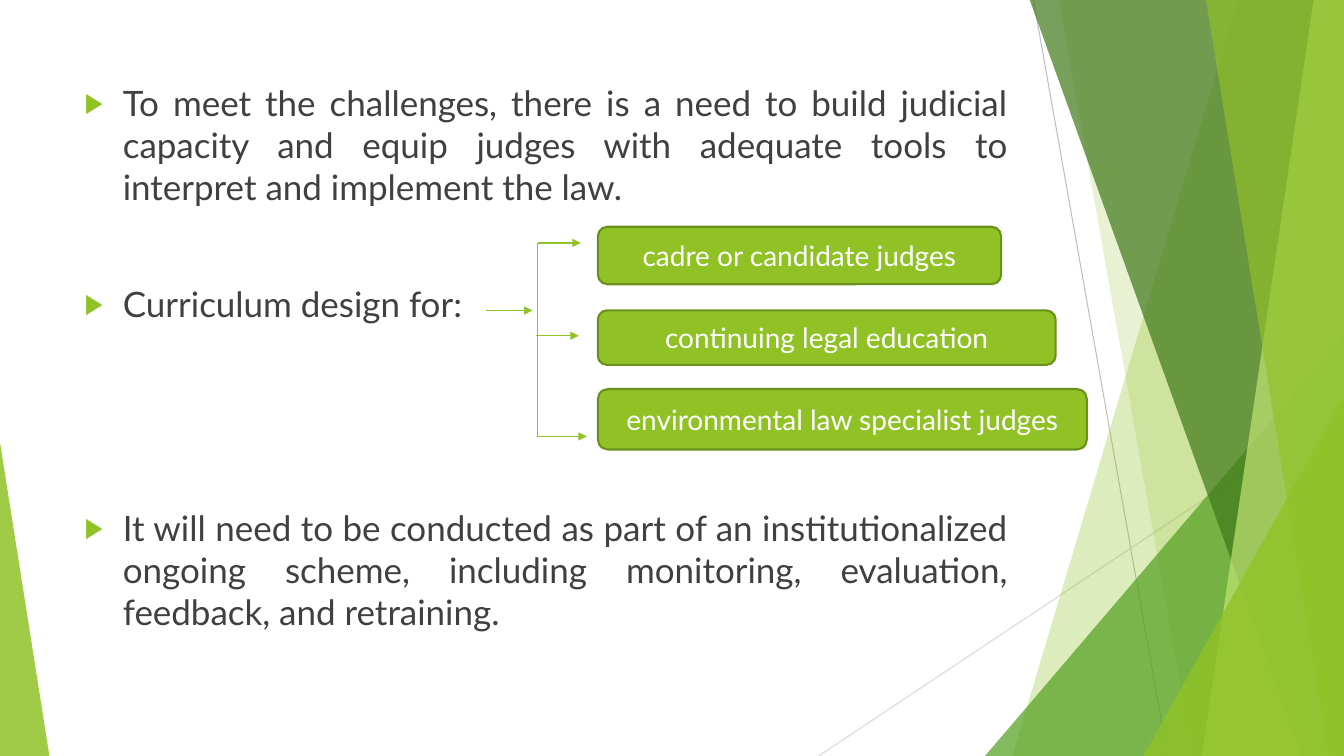
from lxml.etree import SubElement
from pptx import Presentation
from pptx.dml.color import RGBColor
from pptx.enum.shapes import MSO_CONNECTOR as CONN, MSO_SHAPE as SHAPE
from pptx.enum.text import MSO_ANCHOR as ANCHOR, PP_ALIGN as ALIGN
from pptx.oxml.ns import qn
from pptx.util import Inches, Pt

COLORS = {
    "lime": "90C226", "green": "54A021", "forest": "3F7819", "pale": "C0E474",
    "edge": "6B901C", "text": "404040", "white": "FFFFFF",
    "grey": "BFBFBF", "silver": "D9D9D9",
}
FONT = "Lato"


def rgb(name):
    return RGBColor.from_string(COLORS[name])


def paint(sp, color, alpha=100):
    sp.shadow.inherit = False
    sp.fill.solid()
    sp.fill.fore_color.rgb = rgb(color)
    sp.line.fill.background()
    if alpha < 100:
        clr = sp.fill._xPr.find(qn("a:solidFill"))[0]
        SubElement(clr, qn("a:alpha"), val=str(alpha * 1000))


def add_line(s, start, end, color="lime", width=1, arrow=False):
    c = s.shapes.add_connector(CONN.STRAIGHT, *map(Inches, start + end))
    c.line.color.rgb = rgb(color)
    c.line.width = Pt(width)
    if arrow:
        SubElement(c.line._get_or_add_ln(), qn("a:tailEnd"), type="triangle")
    SubElement(c._element.spPr, qn("a:effectLst"))


def add_text(p, text, size=20, color="text", align=ALIGN.CENTER, before=0):
    p.alignment = align
    p.space_before = Pt(before)
    r = p.add_run()
    r.text = text
    r.font.name = FONT
    r.font.size = Pt(size)
    r.font.color.rgb = rgb(color)


def add_bullet(p):
    pPr = p._p.get_or_add_pPr()
    pPr.set("marL", str(Inches(0.38)))
    pPr.set("indent", str(-Inches(0.38)))
    clr = SubElement(pPr, qn("a:buClr"))
    SubElement(clr, qn("a:srgbClr"), val=COLORS["lime"])
    SubElement(pPr, qn("a:buSzPct"), val="80000")
    SubElement(pPr, qn("a:buFont"), typeface="Arial")
    SubElement(pPr, qn("a:buChar"), char="▶")


def add_band(s, right, top, bottom, x_top, x_bottom, color, alpha):
    points = [(x_top, top), (right, top), (right, bottom), (x_bottom, bottom)]
    points = [(Inches(x), Inches(y)) for x, y in points]
    fb = s.shapes.build_freeform(*points[0], scale=1.0)
    fb.add_line_segments(points[1:], close=True)
    paint(fb.convert_to_shape(), color, alpha)


def add_wedge(s, left, top, width, height, peak, color, alpha):
    sp = s.shapes.add_shape(SHAPE.ISOSCELES_TRIANGLE,
                            *map(Inches, (left, top, width, height)))
    sp.adjustments[0] = peak
    paint(sp, color, alpha)


def draw_backdrop(s, width, height):
    add_line(s, (10.25, 0), (11.58, height), "grey", 0.75)
    add_line(s, (width, 4.03), (8.12, height), "silver", 0.75)

    def band(*args):
        add_band(s, width, -0.01, height, *args)

    def right_wedge(w, h, *args):
        add_wedge(s, width - w, height - h, w, h, 1, *args)

    band(12.28, 10.04, "lime", 30)
    band(10.5, 11.83, "lime", 20)
    right_wedge(3.56, 4.17, "green", 72)
    band(10.21, 12.91, "forest", 70)
    band(13.03, 11.92, "pale", 70)
    band(11.96, 13.18, "lime", 65)
    right_wedge(1.99, 3.57, "lime", 80)
    add_wedge(s, 0, height - 3.11, 0.49, 3.11, 0, "lime", 85)


def draw_body(s, left, top, width, height):
    paragraphs = [
        ("To meet the challenges, there is a need to build judicial capacity "
         "and equip judges with adequate tools to interpret and implement "
         "the law.", 0),
        ("Curriculum design for:", 53.5),
        ("It will need to be conducted as part of an institutionalized "
         "ongoing scheme, including monitoring, evaluation, feedback, "
         "and retraining.", 130),
    ]
    tf = s.shapes.add_textbox(*map(Inches, (left, top, width, height))).text_frame
    tf.word_wrap = True
    for i, (text, before) in enumerate(paragraphs):
        p = tf.add_paragraph() if i else tf.paragraphs[0]
        add_text(p, text, size=25, align=ALIGN.JUSTIFY, before=before)
        add_bullet(p)


def draw_audiences(s, left, top):
    audiences = [
        ("cadre or candidate judges", 0, 4, 0.57),
        ("continuing legal education", 0.83, 4.54, 0.54),
        ("environmental law specialist judges", 1.61, 4.85, 0.6),
    ]
    for text, dy, width, height in audiences:
        sp = s.shapes.add_shape(SHAPE.ROUNDED_RECTANGLE,
                                *map(Inches, (left, top + dy, width, height)))
        paint(sp, "lime")
        sp.line.color.rgb = rgb("edge")
        sp.line.width = Pt(1.5)
        tf = sp.text_frame
        tf.word_wrap = True
        tf.vertical_anchor = ANCHOR.MIDDLE
        add_text(tf.paragraphs[0], text, color="white")


def draw_bracket(s, x, top, height):
    add_line(s, (x, top), (x, top + height))
    arrows = [(-0.51, -0.05, 0.67), (0.01, 0.43, 0),
              (-0.01, 0.41, 0.92), (0, 0.49, height)]
    for start, end, dy in arrows:
        add_line(s, (x + start, top + dy), (x + end, top + dy), arrow=True)


def main():
    prs = Presentation()
    prs.slide_width, prs.slide_height = Inches(13.33), Inches(7.5)
    s = prs.slides.add_slide(prs.slide_layouts[6])
    draw_backdrop(s, 13.33, 7.5)
    draw_body(s, 0.74, 0.76, 9.35, 6.28)
    draw_audiences(s, 5.93, 2.25)
    draw_bracket(s, 5.33, 2.41, 1.92)
    prs.save("out.pptx")


if __name__ == "__main__":
    main()
